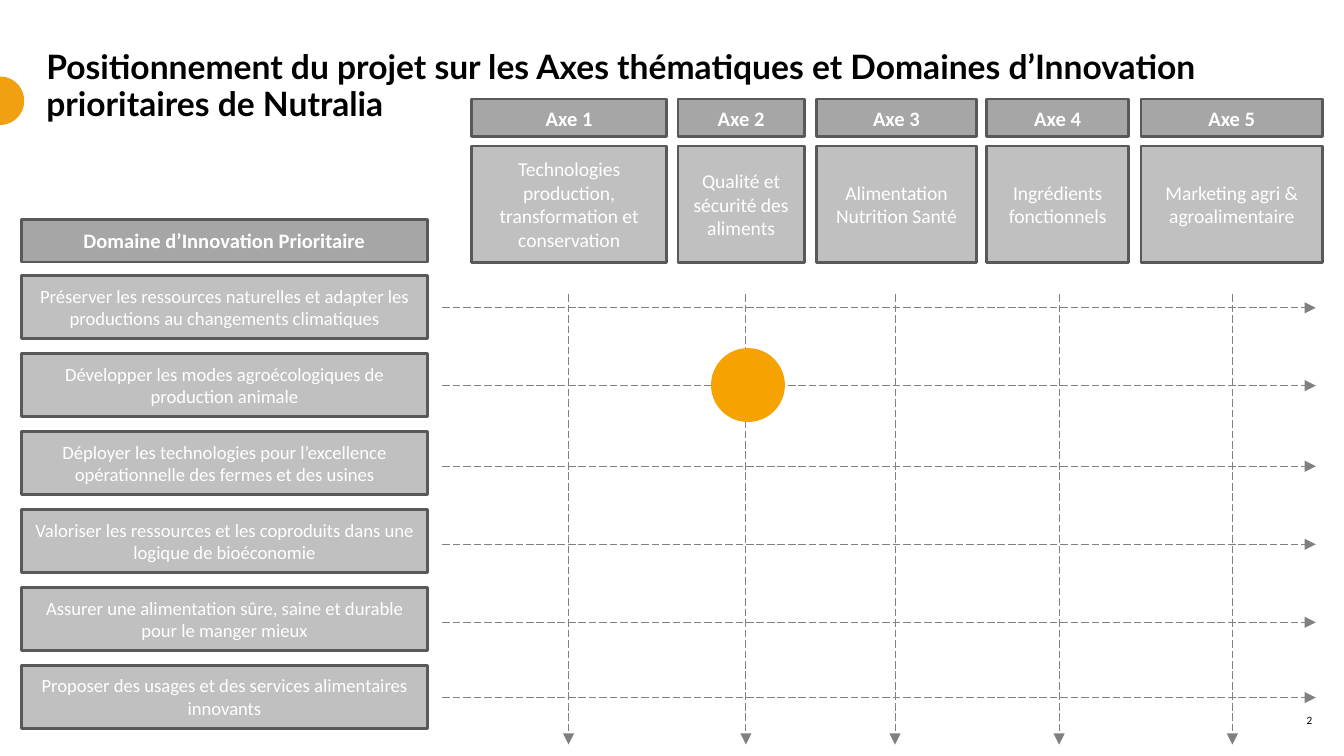
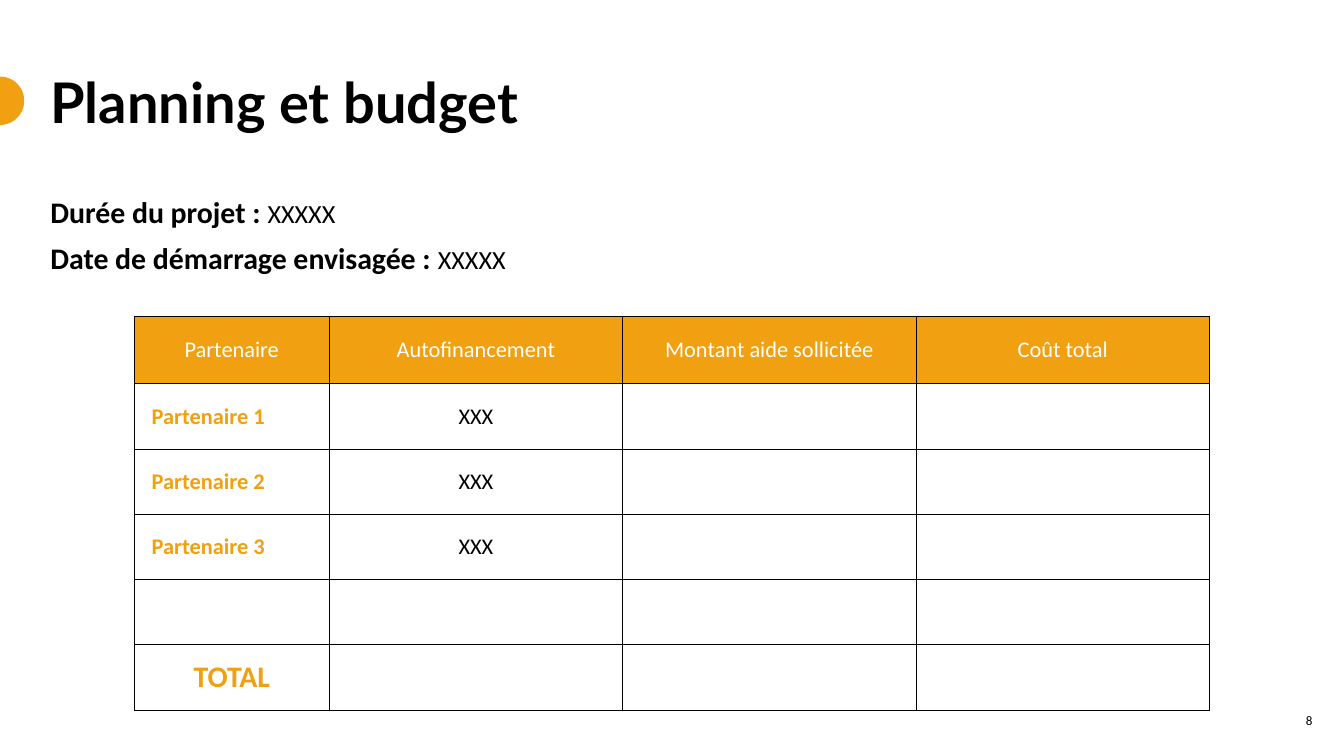
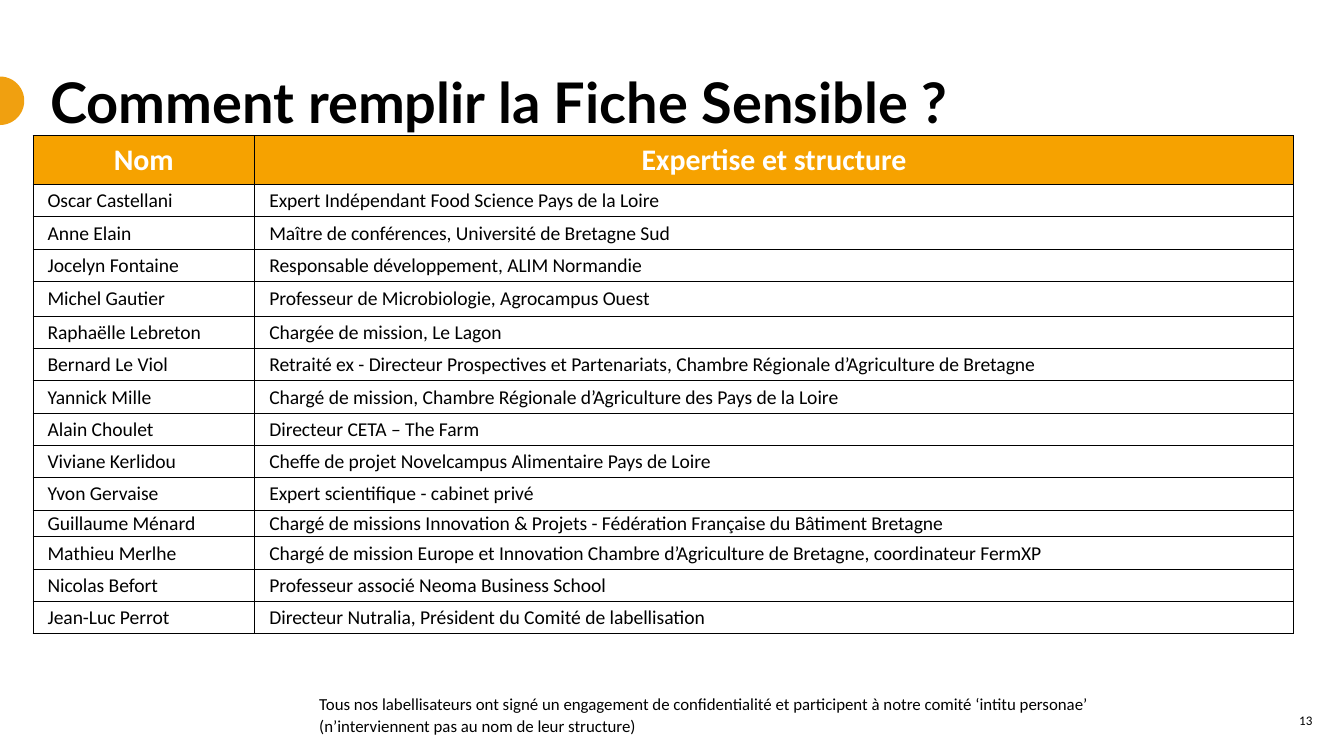
import pptx
import pptx.dml.color
import pptx.enum.dml
import pptx.enum.shapes
import pptx.enum.text
import pptx.oxml
import pptx.oxml.ns
import pptx.util

Pt = pptx.util.Pt
ALIGN = pptx.enum.text.PP_ALIGN
MIDDLE = pptx.enum.text.MSO_ANCHOR.MIDDLE
TOP = pptx.enum.text.MSO_ANCHOR.TOP
SHAPE = pptx.enum.shapes.MSO_SHAPE

# Shared colours and text formats
ORANGE, AMBER = "F0A010", "F6A200"
BLACK, WHITE = "000000", "FFFFFF"
HEAD_GREY, BOX_GREY, EDGE_GREY, LINE_GREY = "A6A6A6", "C0C0C0", "595959", "808080"
BODY = {"name": "Calibri", "size": 12, "bold": False, "color": BLACK}
TITLE = {**BODY, "name": "Lato", "size": 30, "bold": True}
WHITE_TEXT = {**BODY, "color": WHITE}
HEAD = {**WHITE_TEXT, "size": 11, "bold": True}
TEXT_INSETS = (5.4, 2.7, 5.4, 2.7)
BOX_INSETS = (7.2, 3.6, 7.2, 3.6)
CELL_INSETS = (0.7, 0.7, 0.7, 0)

# Axes: left, width, arrow position, description
AXES = [
    (252.7, 104.4, 304.6, "Technologies production, transformation et conservation"),
    (363.2, 67.7, 399.6, "Qualité et sécurité des aliments"),
    (437.4, 85.7, 479.5, "Alimentation Nutrition Santé"),
    (528.5, 76.3, 567.4, "Ingrédients fonctionnels"),
    (611.3, 97.2, 660.2, "Marketing agri & agroalimentaire"),
]
# Domains: arrow position, description
DOMAINS = [
    (164.9, "Préserver les ressources naturelles et adapter les productions au changements climatiques"),
    (206.6, "Développer les modes agroécologiques de production animale"),
    (249.8, "Déployer les technologies pour l’excellence opérationnelle des fermes et des usines"),
    (291.6, "Valoriser les ressources et les coproduits dans une logique de bioéconomie"),
    (333.4, "Assurer une alimentation sûre, saine et durable pour le manger mieux"),
    (373.7, "Proposer des usages et des services alimentaires innovants"),
]
BUDGET = [
    ("Partenaire", "Autofinancement", "Montant aide sollicitée", "Coût total"),
    ("Partenaire 1", "XXX", "", ""),
    ("Partenaire 2", "XXX", "", ""),
    ("Partenaire 3", "XXX", "", ""),
    ("", "", "", ""),
    ("TOTAL", "", "", ""),
]
EXPERTS = [
    ("Nom", "Expertise et structure"),
    ("Oscar Castellani", "Expert Indépendant Food Science Pays de la Loire"),
    ("Anne Elain", "Maître de conférences, Université de Bretagne Sud"),
    ("Jocelyn Fontaine", "Responsable développement, ALIM Normandie"),
    ("Michel Gautier", "Professeur de Microbiologie, Agrocampus Ouest"),
    ("Raphaëlle Lebreton", "Chargée de mission, Le Lagon"),
    ("Bernard Le Viol", "Retraité ex - Directeur Prospectives et Partenariats, "
                        "Chambre Régionale d’Agriculture de Bretagne"),
    ("Yannick Mille", "Chargé de mission, Chambre Régionale d’Agriculture des Pays de la Loire"),
    ("Alain Choulet", "Directeur CETA – The Farm"),
    ("Viviane Kerlidou", "Cheffe de projet Novelcampus Alimentaire Pays de Loire"),
    ("Yvon Gervaise", "Expert scientifique - cabinet privé"),
    ("Guillaume Ménard", "Chargé de missions Innovation & Projets - "
                         "Fédération Française du Bâtiment Bretagne"),
    ("Mathieu Merlhe", "Chargé de mission Europe et Innovation "
                       "Chambre d’Agriculture de Bretagne, coordinateur FermXP"),
    ("Nicolas Befort", "Professeur associé Neoma Business School"),
    ("Jean-Luc Perrot", "Directeur Nutralia, Président du Comité de labellisation"),
]


def rgb(color):
    return pptx.dml.color.RGBColor.from_string(color)


def add_run(p, text, fmt):
    r = p.add_run()
    r.text = text
    for key, value in fmt.items():
        if key == "color":
            r.font.color.rgb = rgb(value)
        else:
            setattr(r.font, key, Pt(value) if key == "size" else value)


def set_insets(target, insets):
    for side, value in zip(("left", "top", "right", "bottom"), insets):
        setattr(target, "margin_" + side, Pt(value))


def write(sp, paragraphs, align=ALIGN.LEFT, anchor=TOP, insets=TEXT_INSETS, spacing=1.0, before=0):
    """Fill a shape; each paragraph is a list of (text, format) runs."""
    tf = sp.text_frame
    tf.word_wrap = True
    tf.auto_size = pptx.enum.text.MSO_AUTO_SIZE.NONE
    tf.vertical_anchor = anchor
    set_insets(tf, insets)
    for i, runs in enumerate(paragraphs):
        p = tf.add_paragraph() if i else tf.paragraphs[0]
        p.alignment = align
        p.line_spacing = spacing
        p.space_before = Pt(before if i else 0)
        for text, fmt in runs:
            add_run(p, text, fmt)


def add_text(s, box, paragraphs, **layout):
    write(s.shapes.add_textbox(*map(Pt, box)), paragraphs, **layout)


def add_figure(s, kind, box, fill, edge=None):
    sp = s.shapes.add_shape(kind, *map(Pt, box))
    sp.shadow.inherit = False
    sp.fill.solid()
    sp.fill.fore_color.rgb = rgb(fill)
    if edge:
        sp.line.color.rgb = rgb(edge)
        sp.line.width = Pt(1.5)
    else:
        sp.line.fill.background()
    return sp


def add_label(s, box, text, fill, fmt):
    sp = add_figure(s, SHAPE.RECTANGLE, box, fill, EDGE_GREY)
    write(sp, [[(text, fmt)]], ALIGN.CENTER, MIDDLE, BOX_INSETS)


def add_arrow(s, x1, y1, x2, y2):
    c = s.shapes.add_connector(pptx.enum.shapes.MSO_CONNECTOR.STRAIGHT, *map(Pt, (x1, y1, x2, y2)))
    c.line.color.rgb = rgb(LINE_GREY)
    c.line.width = Pt(0.5)
    c.line.dash_style = pptx.enum.dml.MSO_LINE.LONG_DASH
    tail = pptx.oxml.parse_xml(f'<a:tailEnd {pptx.oxml.ns.nsdecls("a")} type="triangle"/>')
    c.line._get_or_add_ln().append(tail)
    effects = pptx.oxml.parse_xml(f'<a:effectLst {pptx.oxml.ns.nsdecls("a")}/>')
    c._element.spPr.append(effects)


def set_borders(cell):
    tcPr = cell._tc.get_or_add_tcPr()
    for side in "LRTB":
        tcPr.append(pptx.oxml.parse_xml(
            f'<a:ln{side} {pptx.oxml.ns.nsdecls("a")} w="{Pt(0.25)}"><a:solidFill>'
            f'<a:srgbClr val="{BLACK}"/></a:solidFill></a:ln{side}>'))


def add_table(s, left, top, widths, heights, rows, style):
    """style(i, j) gives fill, text format, alignment, insets and paragraph indents."""
    frame = s.shapes.add_table(len(rows), len(widths), *map(Pt, (left, top, sum(widths), sum(heights))))
    table = frame.table
    table.first_row = table.horz_banding = False
    for column, width in zip(table.columns, widths):
        column.width = Pt(width)
    for i, (row, height) in enumerate(zip(rows, heights)):
        table.rows[i].height = Pt(height)
        for j, text in enumerate(row):
            fill, fmt, align, insets, indents = style(i, j)
            cell = table.cell(i, j)
            set_borders(cell)
            if fill:
                cell.fill.solid()
                cell.fill.fore_color.rgb = rgb(fill)
            else:
                cell.fill.background()
            if text:
                cell.vertical_anchor = MIDDLE
                set_insets(cell, insets)
                p = cell.text_frame.paragraphs[0]
                for key, value in indents.items():
                    p._p.get_or_add_pPr().set(key, str(Pt(value)))
                p.alignment = align
                add_run(p, text, fmt)


def budget_style(i, j):
    if i == 0:
        return ORANGE, WHITE_TEXT, ALIGN.CENTER, BOX_INSETS, {}
    if i == len(BUDGET) - 1:
        return None, {**BODY, "size": 16, "bold": True, "color": ORANGE}, ALIGN.CENTER, BOX_INSETS, {}
    if j == 0:
        return None, {**BODY, "bold": True, "color": ORANGE}, ALIGN.LEFT, CELL_INSETS, {"indent": 8.6}
    return None, BODY, ALIGN.CENTER, CELL_INSETS, {}


def expert_style(i, j):
    if i == 0:
        return AMBER, {**HEAD, "size": 16}, ALIGN.CENTER, CELL_INSETS, {}
    return WHITE, {**BODY, "size": 10.5}, ALIGN.LEFT, CELL_INSETS, {"marL": 7.2, "indent": 0}


def add_slide(prs, title, number, box, size=30, number_size=7):
    s = prs.slides.add_slide(prs.slide_layouts[5])
    add_figure(s, SHAPE.OVAL, (-13, 41, 26, 26), ORANGE)
    sp = s.shapes.title
    sp.left, sp.top, sp.width, sp.height = map(Pt, box)
    write(sp, [[(title, {**TITLE, "size": size})]], spacing=0.9)
    add_text(s, (670.3, 375.1, 38.2, 21.6), [[(number, {**BODY, "size": number_size})]],
             align=ALIGN.RIGHT, anchor=MIDDLE)
    return s


def positioning_slide(prs):
    s = add_slide(prs, "Positionnement du projet sur les Axes thématiques et Domaines d’Innovation "
                  "prioritaires de Nutralia", "2", (19.4, 24.5, 702, 44.6), 18, 6)
    # Column and row labels
    for i, (left, width, _, text) in enumerate(AXES, 1):
        add_label(s, (left, 53, width, 20.2), f"Axe {i}", HEAD_GREY, HEAD)
        add_label(s, (left, 78.2, width, 62.6), text, BOX_GREY, {**WHITE_TEXT, "size": 10.5})
    add_label(s, (11.5, 117.4, 217.4, 23), "Domaine d’Innovation Prioritaire", HEAD_GREY, HEAD)
    for i, (_, text) in enumerate(DOMAINS):
        add_label(s, (11.5, 147.6 + 41.76 * i, 217.4, 33.8), text, BOX_GREY, {**WHITE_TEXT, "size": 10})
    # Grid of arrows
    for y, _ in DOMAINS:
        add_arrow(s, 236.9, y, 704.9, y)
    for _, _, x, _ in AXES:
        add_arrow(s, x, 157.7, x, 398.9)
    # Project marker
    add_figure(s, SHAPE.OVAL, (380.9, 186.5, 39.6, 39.6), AMBER)


def budget_slide(prs):
    s = add_slide(prs, "Planning et budget", "8", (21.6, 37.4, 475.2, 44.6))
    lines = [[(label, {**BODY, "size": 16, "bold": True}), ("XXXXX", {**BODY, "size": 14})]
             for label in ("Durée du projet : ", "Date de démarrage envisagée : ")]
    add_text(s, (21.6, 103, 431.3, 54.7), lines, spacing=0.9, before=7.5)
    add_table(s, 72, 169.4, [104.4] + [157.2] * 3, [36] + [35] * 5, BUDGET, budget_style)


def experts_slide(prs):
    s = add_slide(prs, "Comment remplir la Fiche Sensible ?", "13", (21.6, 37.4, 605.5, 44.6))
    note = ("Tous nos labellisateurs ont signé un engagement de confidentialité et participent à notre "
            "comité ‘intitu personae’ (n’interviennent pas au nom de leur structure)")
    add_text(s, (165.6, 367.9, 424.1, 29.5), [[(note, {**BODY, "size": 9})]], spacing=1.1)
    heights = [26.2] + [17.3] * 3 + [18.7] + [17.3] * 6 + [14.4] + [17.3] * 3
    add_table(s, 17.6, 72.6, [118.8, 556.6], heights, EXPERTS, expert_style)


def main():
    prs = pptx.Presentation()
    prs.slide_width, prs.slide_height = Pt(720), Pt(405)
    positioning_slide(prs)
    budget_slide(prs)
    experts_slide(prs)
    prs.save("out.pptx")


if __name__ == "__main__":
    main()
